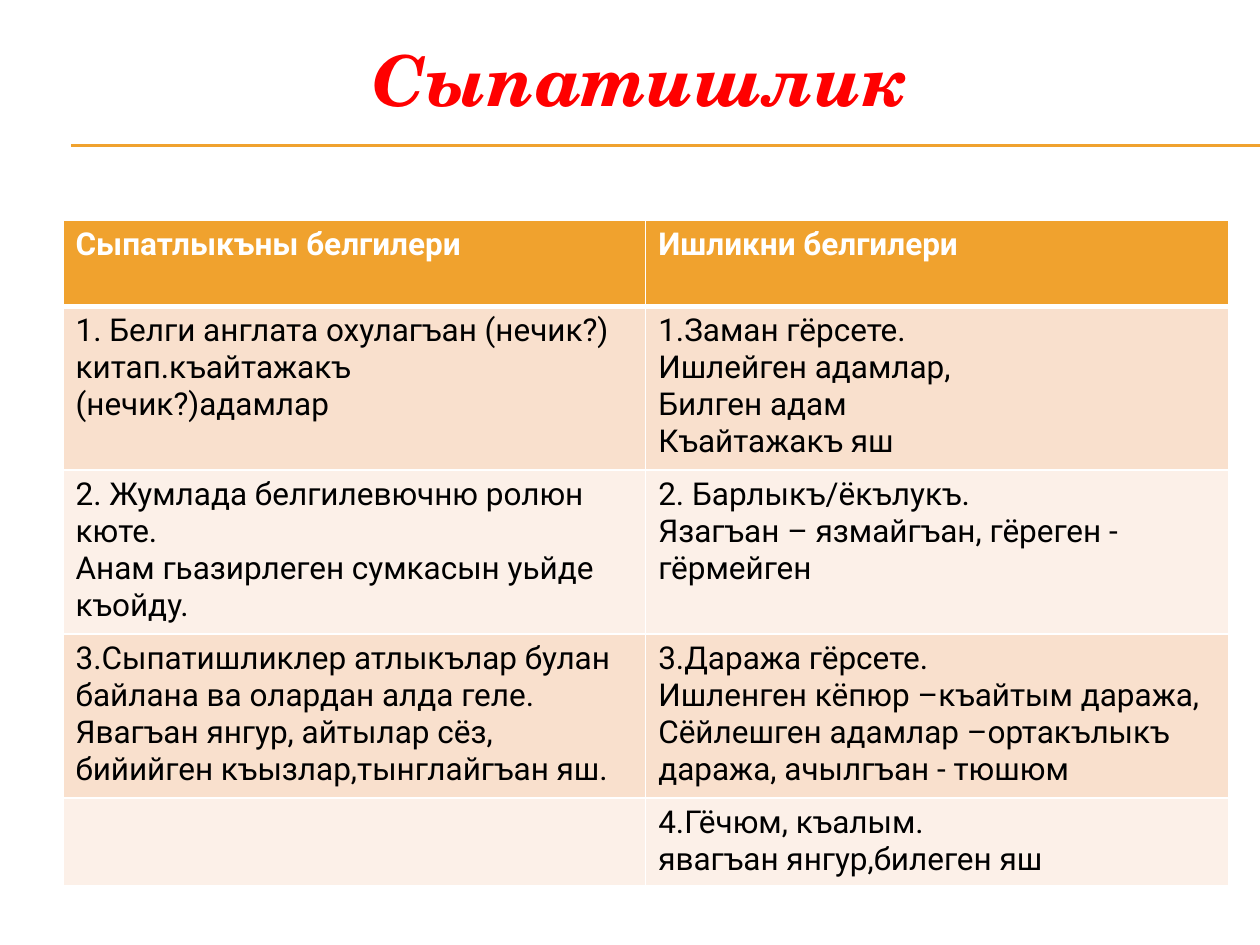
import dataclasses

import lxml.etree
import pptx
import pptx.dml.color
import pptx.enum.shapes
import pptx.enum.text
import pptx.oxml.ns
import pptx.util


@dataclasses.dataclass(frozen=True)
class Theme:
    accent: str = "F0A22E"
    title: str = "FF0000"
    text: str = "000000"
    light: str = "FFFFFF"
    bands: tuple = ("F9E0CD", "FCF0E8")
    title_font: str = "TeX Gyre Schola"
    body_font: str = "Roboto"
    title_size: int = 40
    body_size: int = 18
    rule_width: float = 0.75
    border_width: int = 1
    header_border_width: int = 3


class SlideBuilder:
    """Draws styled elements on the current slide."""

    def __init__(self, slide, theme):
        self.slide = slide
        self.theme = theme

    def color(self, value):
        return pptx.dml.color.RGBColor.from_string(value)

    def add_run(self, paragraph, text, font, size, color, bold=False, italic=False):
        run = paragraph.add_run()
        run.text = text
        run.font.name = font
        run.font.size = pptx.util.Pt(size)
        run.font.color.rgb = self.color(color)
        run.font.bold = bold
        run.font.italic = italic

    def add_rule(self, left, right, top):
        points = [pptx.util.Pt(value) for value in (left, top, right, top)]
        connector = self.slide.shapes.add_connector(
            pptx.enum.shapes.MSO_CONNECTOR.STRAIGHT, *points)
        connector.line.color.rgb = self.color(self.theme.accent)
        connector.line.width = pptx.util.Pt(self.theme.rule_width)
        lxml.etree.SubElement(connector.element.spPr, pptx.oxml.ns.qn("a:effectLst"))

    def add_title(self, text, *box):
        shape = self.slide.shapes.add_textbox(*map(pptx.util.Pt, box))
        frame = shape.text_frame
        frame.word_wrap = True
        frame.vertical_anchor = pptx.enum.text.MSO_ANCHOR.MIDDLE
        paragraph = frame.paragraphs[0]
        paragraph.alignment = pptx.enum.text.PP_ALIGN.CENTER
        paragraph.font.size = pptx.util.Pt(self.theme.title_size)
        self.add_run(paragraph, text, self.theme.title_font, self.theme.title_size,
                     self.theme.title, bold=True, italic=True)
        paragraph.add_line_break()

    def add_borders(self, cell, top, bottom):
        properties = cell._tc.get_or_add_tcPr()
        side = self.theme.border_width
        widths = {"a:lnL": side, "a:lnR": side, "a:lnT": top, "a:lnB": bottom}
        for index, (tag, width) in enumerate(widths.items()):
            line = lxml.etree.Element(pptx.oxml.ns.qn(tag), w=str(pptx.util.Pt(width)))
            fill = lxml.etree.SubElement(line, pptx.oxml.ns.qn("a:solidFill"))
            lxml.etree.SubElement(fill, pptx.oxml.ns.qn("a:srgbClr"), val=self.theme.light)
            properties.insert(index, line)

    def fill_cell(self, cell, lines, row):
        theme = self.theme
        header = row == 0
        cell.fill.solid()
        cell.fill.fore_color.rgb = self.color(
            theme.accent if header else theme.bands[(row - 1) % 2])
        self.add_borders(
            cell,
            top=theme.header_border_width if row == 1 else theme.border_width,
            bottom=theme.header_border_width if header else theme.border_width)
        for index, text in enumerate(lines):
            frame = cell.text_frame
            paragraph = frame.add_paragraph() if index else frame.paragraphs[0]
            self.add_run(paragraph, text, theme.body_font, theme.body_size,
                         theme.light if header else theme.text, bold=header)

    def add_table(self, rows, heights, left, top, width):
        table = self.slide.shapes.add_table(
            len(rows), len(rows[0]),
            *map(pptx.util.Pt, (left, top, width, sum(heights)))).table
        for row, (cells, height) in enumerate(zip(rows, heights)):
            table.rows[row].height = pptx.util.Pt(height)
            for column, lines in enumerate(cells):
                self.fill_cell(table.cell(row, column), lines, row)


TABLE_ROWS = [
    (["Сыпатлыкъны белгилери"], ["Ишликни белгилери"]),
    (["1. Белги англата охулагъан (нечик?) китап.къайтажакъ", "(нечик?)адамлар"],
     ["1.Заман гёрсете.", "Ишлейген адамлар,", "Билген адам", "Къайтажакъ яш"]),
    (["2. Жумлада белгилевючню ролюн кюте.",
      "Анам гьазирлеген сумкасын уьйде къойду."],
     ["2. Барлыкъ/ёкълукъ.", "Язагъан – язмайгъан, гёреген - гёрмейген"]),
    (["3.Сыпатишликлер атлыкълар булан байлана ва олардан алда геле.",
      "Явагъан янгур, айтылар сёз, бийийген къызлар,тынглайгъан яш."],
     ["3.Даража гёрсете.", "Ишленген кёпюр –къайтым даража,",
      "Сёйлешген адамлар –ортакълыкъ даража, ачылгъан - тюшюм"]),
    ([], ["4.Гёчюм, къалым.", "явагъан янгур,билеген яш"]),
]


def main():
    presentation = pptx.Presentation()
    presentation.slide_width = pptx.util.Pt(720)
    presentation.slide_height = pptx.util.Pt(540)
    slide = presentation.slides.add_slide(presentation.slide_layouts[6])
    builder = SlideBuilder(slide, Theme())
    for top in (82.8, 83.5):
        builder.add_rule(40.5, 720, top)
    builder.add_title("Сыпатишлик", 24, 36, 684, 66)
    builder.add_table(TABLE_ROWS, [49, 91.5, 91.5, 91.5, 49], 36, 126, 666)
    presentation.save("out.pptx")


if __name__ == "__main__":
    main()
